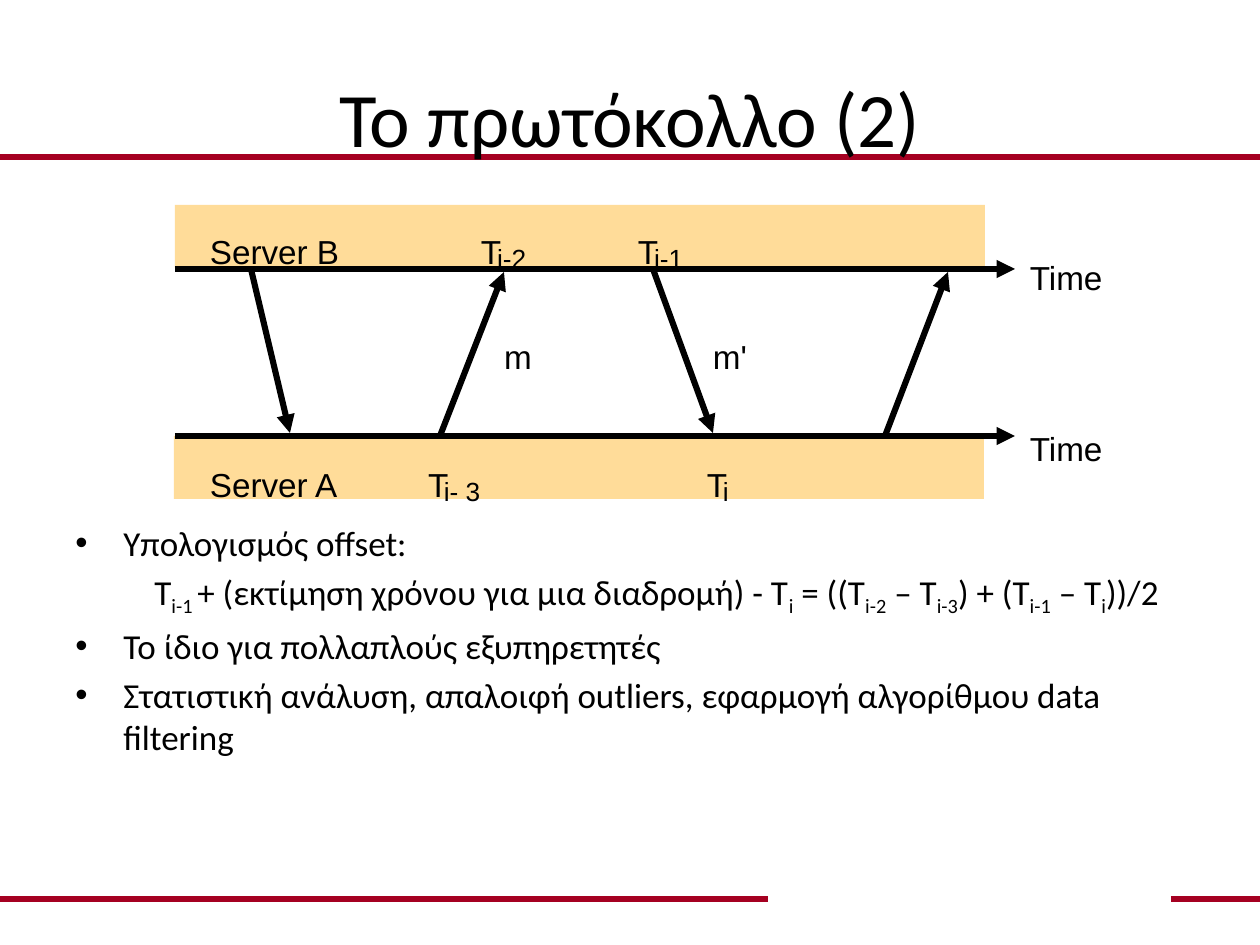
from dataclasses import dataclass

import pptx
import pptx.dml.color
import pptx.enum.shapes
import pptx.enum.text
import pptx.oxml
import pptx.oxml.ns
import pptx.util

PX = 914400 // 126
BLACK, RED, SAND = "000000", "A50021", "FFDC99"
TIMELINE_B, TIMELINE_A = 269, 436
ARROW_GAP = 3


@dataclass
class Label:
    text: str
    x: int
    y: int
    w: int
    sub: str = ""
    sub_w: int = 0


@dataclass
class Message:
    x1: int
    x2: int
    to_b: bool


@dataclass
class Item:
    runs: list[tuple[str, bool]]
    bullet: bool = True


TOP_Y, BOTTOM_Y = 231, 464
LABELS = [
    Label("Server B", 210, TOP_Y, 134),
    Label("T", 481, TOP_Y, 21, "i-2", 32),
    Label("T", 638, TOP_Y, 21, "i-1", 32),
    Label("Time", 1030, 257, 77),
    Label("m", 504, 336, 29),
    Label("m'", 713, 336, 35),
    Label("Server A", 210, BOTTOM_Y, 134),
    Label("T", 428, BOTTOM_Y, 21, "i- 3", 40),
    Label("T", 707, BOTTOM_Y, 21, "i", 7),
    Label("Time", 1030, 428, 77),
]
MESSAGES = [
    Message(251, 290, False),
    Message(440, 504, True),
    Message(653, 713, False),
    Message(885, 948, True),
]
ITEMS = [
    Item([("Υπολογισμός offset:", False)]),
    Item([
        ("T", False), ("i-1 ", True),
        ("+ (εκτίμηση χρόνου για μια διαδρομή) - T", False), ("i", True),
        (" = ((T", False), ("i-2", True), (" – T", False), ("i-3", True),
        (") + (T", False), ("i-1", True), (" – T", False), ("i", True),
        ("))/2", False),
    ], bullet=False),
    Item([("Το ίδιο για πολλαπλούς εξυπηρετητές", False)]),
    Item([("Στατιστική ανάλυση, απαλοιφή outliers, εφαρμογή αλγορίθμου "
           "data filtering", False)]),
]


def px(n: int) -> int:
    return pptx.util.Emu(n * PX)


def rgb(color: str) -> pptx.dml.color.RGBColor:
    return pptx.dml.color.RGBColor.from_string(color)


def drawing_element(tag: str):
    """Make an empty DrawingML element from its name and attributes."""
    return pptx.oxml.parse_xml(f'<a:{tag} {pptx.oxml.ns.nsdecls("a")}/>')


def add_run(p, text: str, *, size: int, font: str, color: str = BLACK,
            subscript: bool = False) -> None:
    r = p.add_run()
    r.text = text
    r.font.size = pptx.util.Pt(size)
    r.font.name = font
    r.font.color.rgb = rgb(color)
    if subscript:
        r.font._element.set("baseline", "-25000")


def add_line(slide, x1: int, y1: int, x2: int, y2: int, *, color: str = BLACK,
             width: float = 3.5, arrow: bool = False) -> None:
    sp = slide.shapes.add_connector(
        pptx.enum.shapes.MSO_CONNECTOR.STRAIGHT, px(x1), px(y1), px(x2), px(y2))
    sp.line.color.rgb = rgb(color)
    sp.line.width = pptx.util.Pt(width)
    if arrow:
        sp.line._get_or_add_ln().append(
            drawing_element('tailEnd type="triangle" w="med" len="med"'))
    sp._element.spPr.append(drawing_element("effectLst"))


def add_band(slide, x: int, y: int) -> None:
    sp = slide.shapes.add_shape(
        pptx.enum.shapes.MSO_SHAPE.RECTANGLE, px(x), px(y), px(810), px(63))
    sp.shadow.inherit = False
    sp.fill.solid()
    sp.fill.fore_color.rgb = rgb(SAND)
    sp.line.fill.background()


def add_label_text(slide, text: str, x: int, y: int, w: int, h: int,
                   size: int) -> None:
    tf = slide.shapes.add_textbox(px(x), px(y), px(w), px(h)).text_frame
    tf.margin_left = tf.margin_right = tf.margin_top = tf.margin_bottom = 0
    tf.word_wrap = False
    tf.auto_size = pptx.enum.text.MSO_AUTO_SIZE.SHAPE_TO_FIT_TEXT
    add_run(tf.paragraphs[0], text, size=size, font="Arial")


def add_label(slide, label: Label) -> None:
    add_label_text(slide, label.text, label.x, label.y, label.w, 45, 19)
    if label.sub:
        add_label_text(slide, label.sub, label.x + 16, label.y + 11,
                       label.sub_w, 35, 15)


def set_indent(p, left: int, first: int, bullet: bool) -> None:
    pPr = p._p.get_or_add_pPr()
    pPr.set("marL", str(px(left)))
    pPr.set("indent", str(px(first)))
    tags = ('buFont typeface="Arial"', 'buChar char="•"') if bullet else ("buNone",)
    for tag in tags:
        pPr.append(drawing_element(tag))


def add_title(slide, text: str) -> None:
    """Fill the title and bring it in front of the rule it overlaps."""
    sp = slide.shapes.title
    slide.shapes._spTree.append(sp._element)
    sp.left, sp.top, sp.width, sp.height = px(63), px(38), px(1134), px(158)
    tf = sp.text_frame
    tf.vertical_anchor = pptx.enum.text.MSO_ANCHOR.MIDDLE
    p = tf.paragraphs[0]
    p.alignment = pptx.enum.text.PP_ALIGN.CENTER
    add_run(p, text, size=44, font="Calibri")


def add_body(slide, items: list[Item]) -> None:
    tf = slide.shapes.add_textbox(px(63), px(515), px(1134), px(329)).text_frame
    tf.word_wrap = True
    for i, item in enumerate(items):
        p = tf.add_paragraph() if i else tf.paragraphs[0]
        if item.bullet:
            set_indent(p, 48, -48, True)
        else:
            set_indent(p, 79, 0, False)
        if i:
            p.space_before = pptx.util.Pt(4)
        for text, subscript in item.runs:
            add_run(p, text, size=20, font="Calibri", subscript=subscript)


def main() -> None:
    prs = pptx.Presentation()
    prs.slide_width, prs.slide_height = px(1260), px(945)
    slide = prs.slides.add_slide(prs.slide_layouts[5])

    for x1, x2, y in ((1171, 1260, 899), (0, 768, 899), (0, 1260, 157)):
        add_line(slide, x1, y, x2, y, color=RED, width=3)
    add_title(slide, "Το πρωτόκολλο (2)")
    add_body(slide, ITEMS)

    for m in MESSAGES:
        if m.to_b:
            start, end = TIMELINE_A, TIMELINE_B + ARROW_GAP
        else:
            start, end = TIMELINE_B, TIMELINE_A - ARROW_GAP
        add_line(slide, m.x1, start, m.x2, end, arrow=True)
    add_band(slide, 174, TIMELINE_A)
    add_band(slide, 175, TIMELINE_B - 64)
    for y in (TIMELINE_B, TIMELINE_A):
        add_line(slide, 175, y, 1015, y, arrow=True)
    for label in LABELS:
        add_label(slide, label)

    prs.save("out.pptx")


if __name__ == "__main__":
    main()
